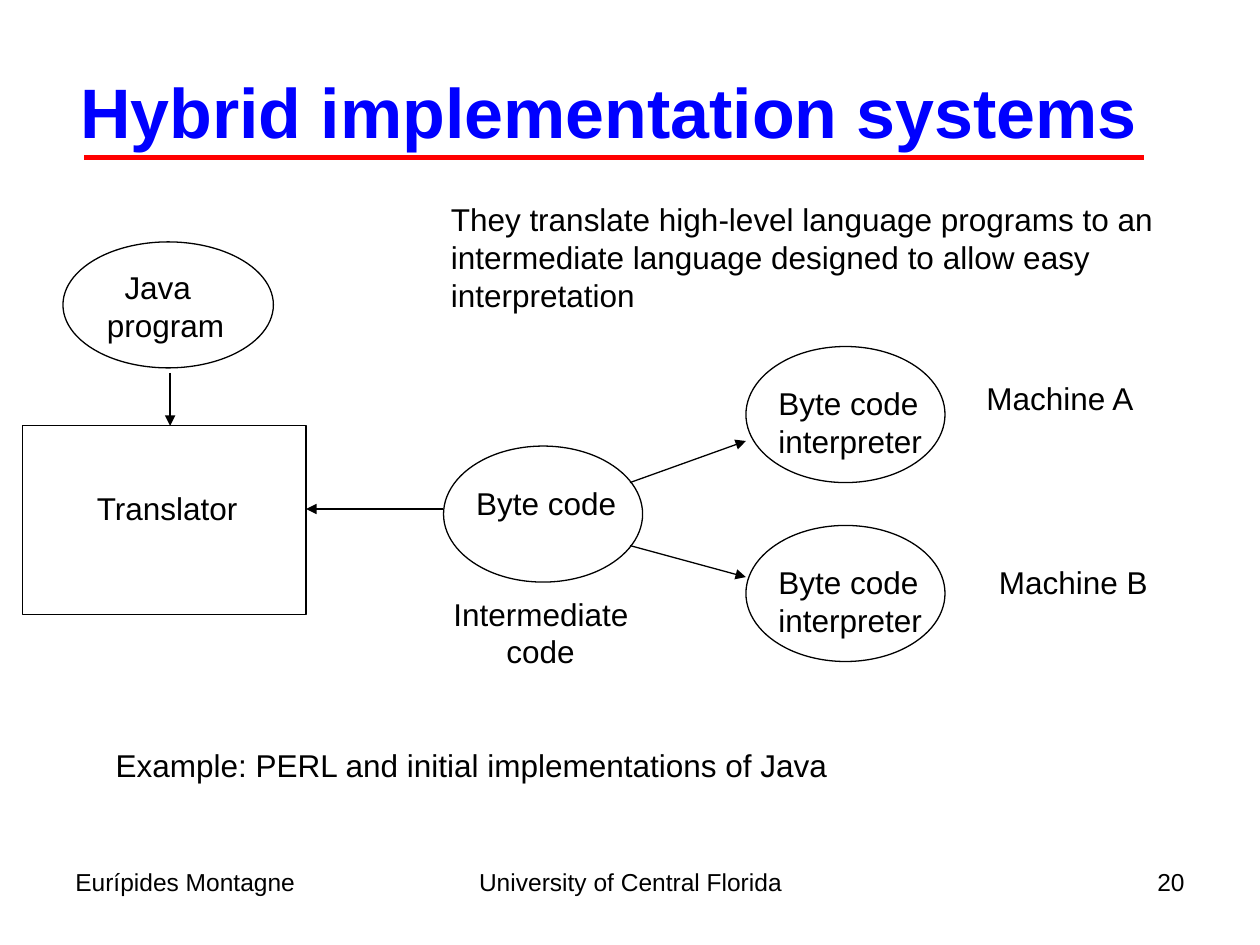
from lxml import etree
from pptx import Presentation
from pptx import util as u
from pptx.dml.color import RGBColor
from pptx.enum import shapes, text
from pptx.oxml.ns import qn

COLORS = {"ink": "000000", "title": "0000FF", "rule": "FF0000"}
FONT = "Arial"


class SlideBuilder:
    """Hold the style and the current slide, and add elements to it."""

    def __init__(self, presentation):
        self.slide = presentation.slides.add_slide(presentation.slide_layouts[5])

    def set_text(self, frame, lines, size, color="ink", bold=False, align="LEFT", indents=()):
        frame.text = "\n".join(lines)
        for paragraph in frame.paragraphs:
            paragraph.alignment = text.PP_ALIGN[align]
            paragraph.font.name = FONT
            paragraph.font.size = u.Pt(size)
            paragraph.font.bold = bold
            paragraph.font.color.rgb = RGBColor.from_string(COLORS[color])
        for paragraph, indent in zip(frame.paragraphs, indents):
            properties = paragraph._p.get_or_add_pPr()
            properties.set("marL", str(u.Inches(indent)))
            properties.set("indent", "0")

    def title(self, line, left, top, width, height):
        shape = self.slide.shapes.title
        shape.left, shape.top = u.Inches(left), u.Inches(top)
        shape.width, shape.height = u.Inches(width), u.Inches(height)
        frame = shape.text_frame
        frame.auto_size = text.MSO_AUTO_SIZE.NONE
        frame.vertical_anchor = text.MSO_ANCHOR.MIDDLE
        self.set_text(frame, [line], 40, "title", True, "CENTER")

    def text_box(self, left, top, width, height):
        return self.slide.shapes.add_textbox(
            u.Inches(left), u.Inches(top), u.Inches(width), u.Inches(height)
        ).text_frame

    def label(self, lines, left, top, width, indents=()):
        frame = self.text_box(left, top, width, 0.1 + 0.3 * len(lines))
        frame.word_wrap = False
        frame.auto_size = text.MSO_AUTO_SIZE.SHAPE_TO_FIT_TEXT
        self.set_text(frame, lines, 18, indents=indents)

    def footer(self, line, left, width, align):
        frame = self.text_box(left, 6.83, width, 0.52)
        frame.word_wrap = True
        self.set_text(frame, [line], 14, align=align)

    def outline(self, kind, left, top, width, height):
        shape = self.slide.shapes.add_shape(
            kind, u.Inches(left), u.Inches(top), u.Inches(width), u.Inches(height)
        )
        shape.shadow.inherit = False
        shape.fill.background()
        shape.line.color.rgb = RGBColor.from_string(COLORS["ink"])
        shape.line.width = u.Pt(0.75)

    def line(self, start, end, color="ink", width=0.75, arrow=True):
        connector = self.slide.shapes.add_connector(
            shapes.MSO_CONNECTOR.STRAIGHT, *(u.Inches(value) for value in start + end)
        )
        connector.line.color.rgb = RGBColor.from_string(COLORS[color])
        connector.line.width = u.Pt(width)
        properties = connector._element.spPr
        if arrow:
            etree.SubElement(properties.find(qn("a:ln")), qn("a:tailEnd"), type="triangle")
        etree.SubElement(properties, qn("a:effectLst"))


def main():
    presentation = Presentation()
    presentation.slide_width = u.Inches(10)
    presentation.slide_height = u.Inches(7.5)
    builder = SlideBuilder(presentation)
    oval = shapes.MSO_SHAPE.OVAL

    builder.title("Hybrid implementation systems", 0.33, 0.25, 9, 1.25)
    builder.line((0.67, 1.25), (9.08, 1.25), "rule", 3, arrow=False)

    builder.outline(oval, 0.5, 1.92, 1.67, 1)
    builder.label(["Java", "program"], 0.75, 2.08, 1.13, indents=(0.14, 0))
    builder.outline(shapes.MSO_SHAPE.RECTANGLE, 0.18, 3.38, 2.25, 1.5)
    builder.label(["Translator"], 0.67, 3.83, 1.33)
    builder.outline(oval, 3.52, 3.54, 1.58, 1.08)
    builder.label(["Byte code"], 3.68, 3.79, 1.31)
    builder.label(["Intermediate", "code"], 3.5, 4.67, 1.59, indents=(0, 0.42))

    for top in (2.75, 4.17):
        builder.outline(oval, 5.92, top, 1.58, 1.08)
        builder.label(["Byte code", "interpreter"], 6.08, top + 0.25, 1.34)
    builder.label(["Machine A"], 7.73, 2.96, 1.38)
    builder.label(["Machine B"], 7.83, 4.42, 1.38)

    for start, end in (
        ((1.35, 2.96), (1.35, 3.38)),
        ((3.52, 4.04), (2.43, 4.04)),
        ((5, 3.83), (5.92, 3.5)),
        ((5, 4.33), (5.92, 4.58)),
    ):
        builder.line(start, end)

    builder.label(
        [
            "They translate high-level language programs to an",
            "intermediate language designed to allow easy",
            "interpretation",
        ],
        3.48, 1.54, 5.77,
    )
    builder.label(["Example: PERL and initial implementations of Java"], 0.82, 5.87, 5.85)

    builder.footer("Eurípides Montagne", 0.5, 2.33, "LEFT")
    builder.footer("University of Central Florida", 3.42, 3.17, "CENTER")
    builder.footer("20", 7.17, 2.33, "RIGHT")
    presentation.save("out.pptx")


if __name__ == "__main__":
    main()
